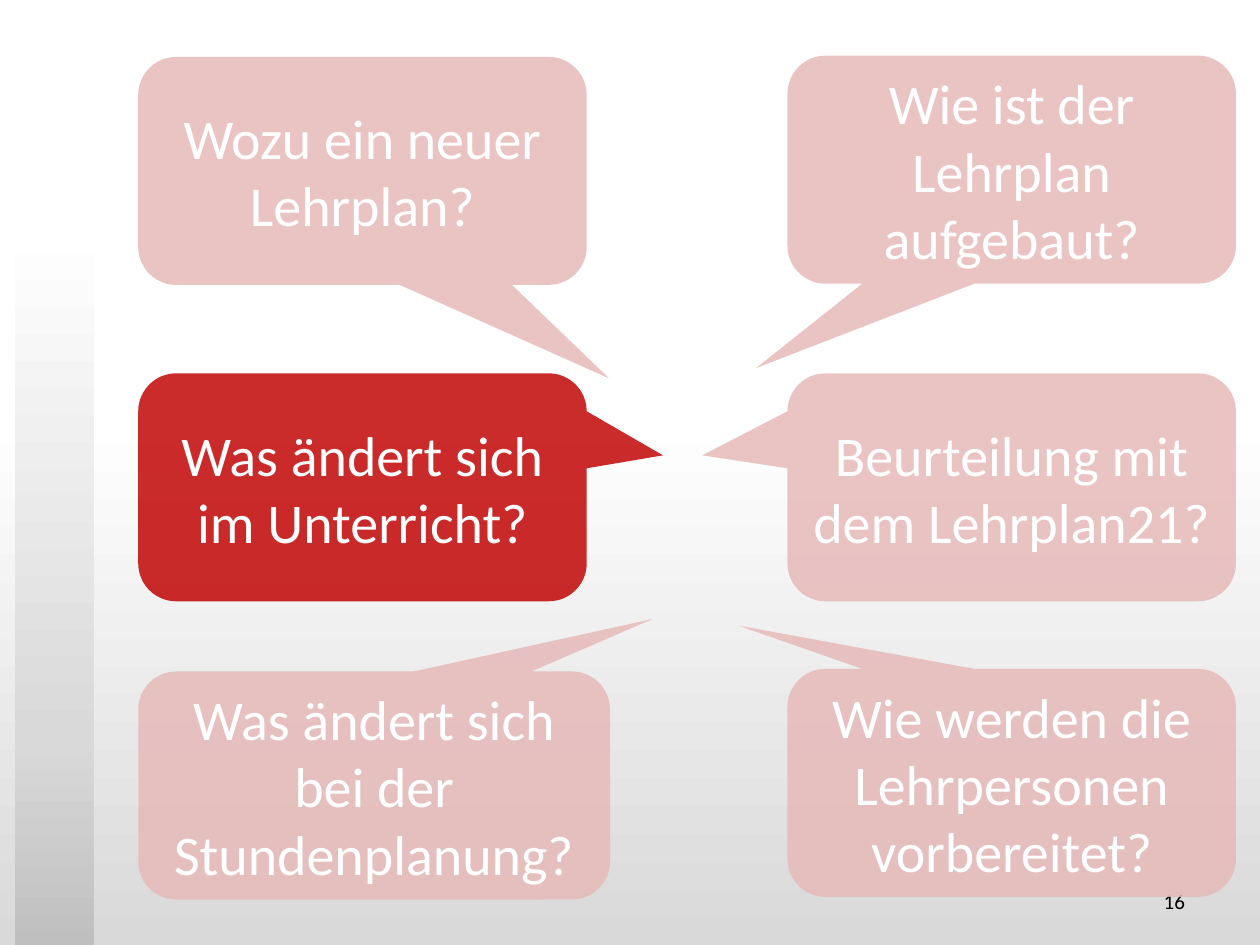
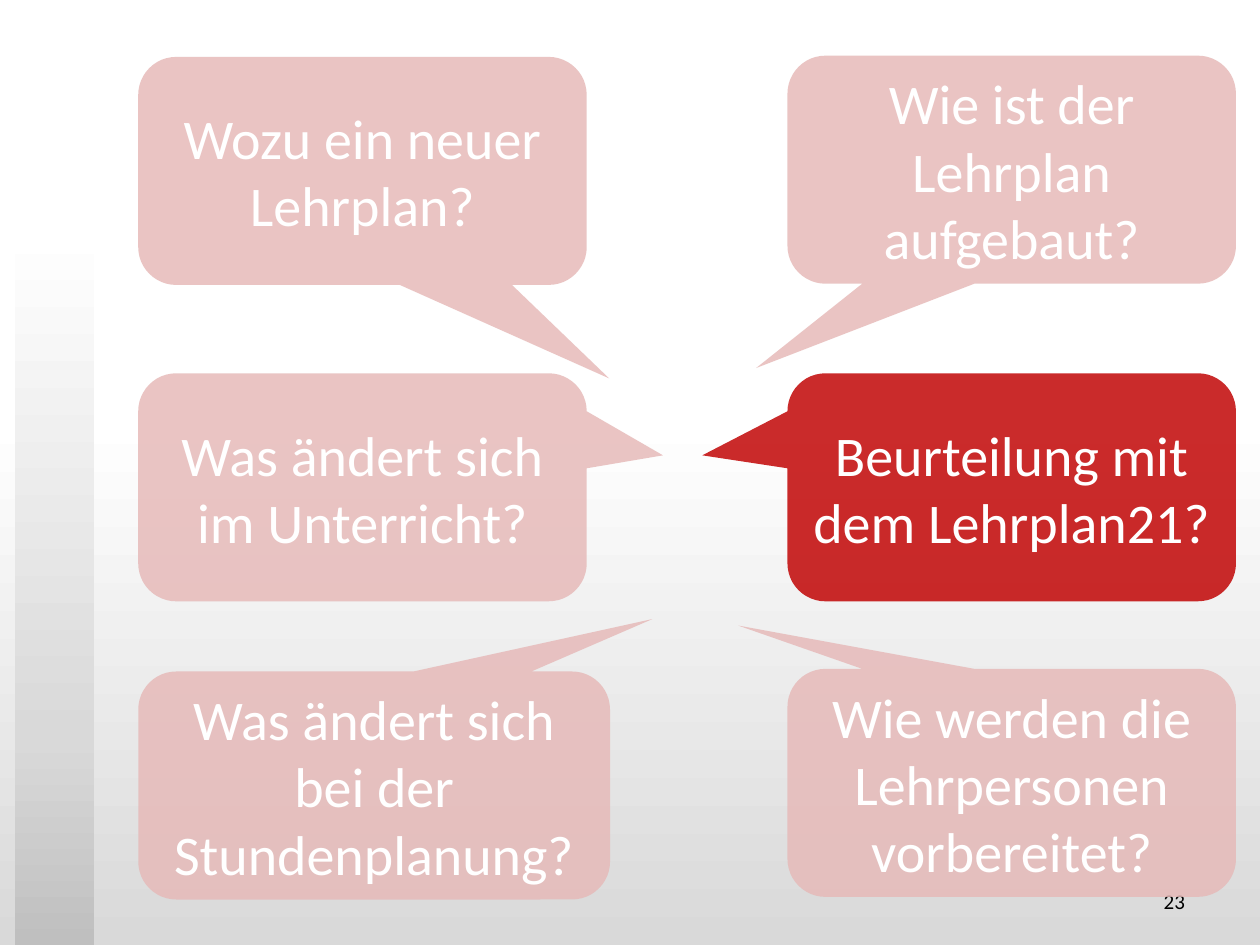
from typing import NamedTuple

from lxml import etree
from pptx import Presentation
from pptx.dml.color import RGBColor
from pptx.enum.shapes import MSO_SHAPE
from pptx.enum.text import MSO_ANCHOR, PP_ALIGN
from pptx.oxml.ns import qn
from pptx.util import Pt

RECT = MSO_SHAPE.RECTANGLE
BUBBLE = MSO_SHAPE.ROUNDED_RECTANGULAR_CALLOUT
MIDDLE = MSO_ANCHOR.MIDDLE
CENTER, RIGHT = PP_ALIGN.CENTER, PP_ALIGN.RIGHT

FONT = "Calibri"
WHITE, BLACK = "FFFFFF", "000000"
PALE, STRONG = "E6B9B8", "C00000"
OPAQUE = 83
PAGE = [(0, WHITE), (44, WHITE), (100, "D9D9D9")]
BAND = [(24, WHITE), (78, "D9D9D9"), (100, "BFBFBF")]
LEFT_X, RIGHT_X = 79, 450
WIDE, HIGH = 256.3, 130.3


class Bubble(NamedTuple):
    text: str
    left: float
    top: float
    tip_x: float
    tip_y: float
    width: float = WIDE


class Page(NamedTuple):
    number: str
    active: str


TEACH = "Was ändert sich im Unterricht?"
GRADE = "Beurteilung mit dem Lehrplan21?"
BUBBLES = [
    Bubble("Wozu ein neuer Lehrplan?", LEFT_X, 32.5, 0.55, 0.91),
    Bubble("Wie ist der Lehrplan aufgebaut?", RIGHT_X, 31.8, -0.57, 0.87),
    Bubble(TEACH, LEFT_X, 213.3, 0.67, -0.14),
    Bubble("Wie werden die Lehrpersonen vorbereitet?", RIGHT_X, 382.2, -0.61, -0.69),
    Bubble("Was ändert sich bei der Stundenplanung?", LEFT_X, 383.7, 0.59, -0.73, 269.6),
    Bubble(GRADE, RIGHT_X, 213.3, -0.69, -0.14),
]
PAGES = [Page("16", TEACH), Page("23", GRADE)]


def color(code: str) -> RGBColor:
    return RGBColor.from_string(code)


def shade(fill, root, stops: list[tuple[int, str]]) -> None:
    fill.gradient()
    fill.gradient_angle = 270
    group = root.find(".//" + qn("a:gsLst"))
    for old in list(group):
        group.remove(old)
    for place, code in stops:
        stop = etree.SubElement(group, qn("a:gs"), pos=str(place * 1000))
        etree.SubElement(stop, qn("a:srgbClr"), val=code)


def write(frame, text: str, size: float, code: str, align) -> None:
    frame.word_wrap = True
    frame.vertical_anchor = MIDDLE
    line = frame.paragraphs[0]
    line.text = text
    line.alignment = align
    line.font.name = FONT
    line.font.size = Pt(size)
    line.font.color.rgb = color(code)


def add_band(slide) -> None:
    band = slide.shapes.add_shape(RECT, Pt(8.6), Pt(0), Pt(45.2), Pt(540))
    band.shadow.inherit = False
    band.line.fill.background()
    shade(band.fill, band.element, BAND)


def add_number(slide, number: str) -> None:
    box = slide.shapes.add_textbox(Pt(516.2), Pt(500.5), Pt(168), Pt(28.8))
    write(box.text_frame, number, 12, BLACK, RIGHT)


def add_bubble(slide, item: Bubble, code: str) -> None:
    shape = slide.shapes.add_shape(
        BUBBLE, Pt(item.left), Pt(item.top), Pt(item.width), Pt(HIGH)
    )
    shape.adjustments[0] = item.tip_x
    shape.adjustments[1] = item.tip_y
    shape.shadow.inherit = False
    shape.line.fill.background()
    shape.fill.solid()
    shape.fill.fore_color.rgb = color(code)
    tint = shape.element.spPr.find(".//" + qn("a:srgbClr"))
    etree.SubElement(tint, qn("a:alpha"), val=str(OPAQUE * 1000))
    write(shape.text_frame, item.text, 32, WHITE, CENTER)


def main() -> None:
    deck = Presentation()
    deck.slide_width, deck.slide_height = Pt(720), Pt(540)
    master = deck.slide_master
    shade(master.background.fill, master.element, PAGE)
    for page in PAGES:
        slide = deck.slides.add_slide(deck.slide_layouts[6])
        add_band(slide)
        add_number(slide, page.number)
        for item in BUBBLES:
            add_bubble(slide, item, STRONG if item.text == page.active else PALE)
    deck.save("out.pptx")


if __name__ == "__main__":
    main()
